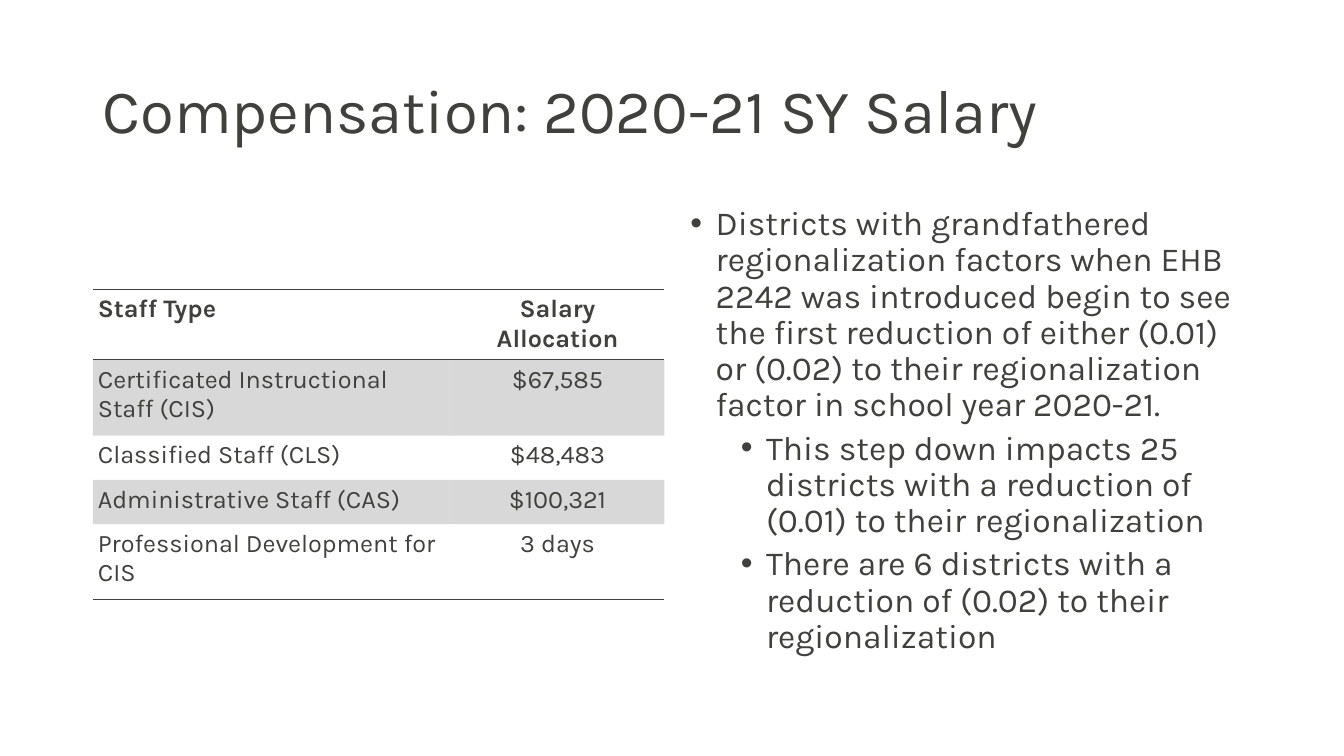
"""Build the 2020-21 school year salary compensation slide."""
from lxml.etree import SubElement
from pptx import Presentation
from pptx.dml.color import RGBColor
from pptx.enum.text import MSO_ANCHOR, PP_ALIGN
from pptx.oxml import parse_xml
from pptx.oxml.ns import nsdecls, qn
from pptx.util import Inches, Pt

INK = "40403D"


def style(paragraph, size, bold=False):
    paragraph.font.name = "Karla"
    paragraph.font.size = Pt(size)
    paragraph.font.bold = bold
    paragraph.font.color.rgb = RGBColor.from_string(INK)


def add_border(cell, side, position):
    line = parse_xml(
        f'<a:{side} {nsdecls("a")} w="12700"><a:solidFill>'
        f'<a:srgbClr val="{INK}"/></a:solidFill></a:{side}>')
    cell._tc.get_or_add_tcPr().insert(position, line)


prs = Presentation()
prs.slide_width, prs.slide_height = Inches(13.33), Inches(7.5)
slide = prs.slides.add_slide(prs.slide_layouts[6])

title = slide.shapes.add_textbox(
    Inches(0.92), Inches(0.4), Inches(11.5), Inches(1.45)).text_frame
title.word_wrap = True
title.vertical_anchor = MSO_ANCHOR.MIDDLE
title.text = "Compensation: 2020-21 SY Salary"
title.paragraphs[0].line_spacing = 0.9
style(title.paragraphs[0], 44)

points = [
    (0, "Districts with grandfathered regionalization factors when EHB 2242 was "
        "introduced begin to see the first reduction of either (0.01) or (0.02) "
        "to their regionalization factor in school year 2020-21."),
    (1, "This step down impacts 25 districts with a reduction of (0.01) to their "
        "regionalization"),
    (1, "There are 6 districts with a reduction of (0.02) to their regionalization"),
]
regionalization = slide.shapes.add_textbox(
    Inches(6.75), Inches(2), Inches(5.67), Inches(4.57)).text_frame
regionalization.word_wrap = True
for index, (level, words) in enumerate(points):
    point = regionalization.add_paragraph() if index else regionalization.paragraphs[0]
    point.text = words
    point.level = level
    point.line_spacing = 0.9
    point.space_before = Pt(5 if index else 0)
    properties = point._p.get_or_add_pPr()
    properties.set("marL", str(Inches(0.25 + 0.5 * level)))
    properties.set("indent", str(Inches(-0.25)))
    SubElement(properties, qn("a:buFont")).set("typeface", "Arial")
    SubElement(properties, qn("a:buChar")).set("char", "•")
    style(point, 24)

salaries = [
    ("Staff Type", "Salary Allocation"),
    ("Certificated Instructional Staff (CIS)", "$67,585"),
    ("Classified Staff (CLS)", "$48,483"),
    ("Administrative Staff (CAS)", "$100,321"),
    ("Professional Development for CIS", "3 days"),
]
row_heights = [0.44, 0.75, 0.44, 0.44, 0.75]
last_row = len(salaries) - 1
salary_frame = slide.shapes.add_table(
    len(salaries), 2, Inches(0.92), Inches(2.87), Inches(5.67), Inches(2.82))
salary_table = salary_frame.table
salary_table.horz_banding = False
salary_table._tbl.tblPr.find(qn("a:tableStyleId")).text = (
    "{2D5ABB26-0587-4C30-8999-92F81FD0307C}")
salary_table.columns[0].width = Inches(3.55)
salary_table.columns[1].width = Inches(2.12)

for row, entries in enumerate(salaries):
    salary_table.rows[row].height = Inches(row_heights[row])
    for column, entry in enumerate(entries):
        cell = salary_table.cell(row, column)
        cell.margin_left = cell.margin_right = Inches(0.05)
        cell.margin_top = cell.margin_bottom = Inches(0.05)
        cell.text = entry
        label = cell.text_frame.paragraphs[0]
        label.alignment = PP_ALIGN.CENTER if column else PP_ALIGN.LEFT
        style(label, 18, bold=row == 0)
        if row % 2:
            cell.fill.solid()
            cell.fill.fore_color.rgb = RGBColor.from_string(INK)
            tint = cell._tc.tcPr.find(".//" + qn("a:srgbClr"))
            SubElement(tint, qn("a:alpha")).set("val", "20000")
        else:
            cell.fill.background()
        if row in (0, last_row):
            add_border(cell, "lnB", 0)
        if row == 0:
            add_border(cell, "lnT", 0)

prs.save("out.pptx")
